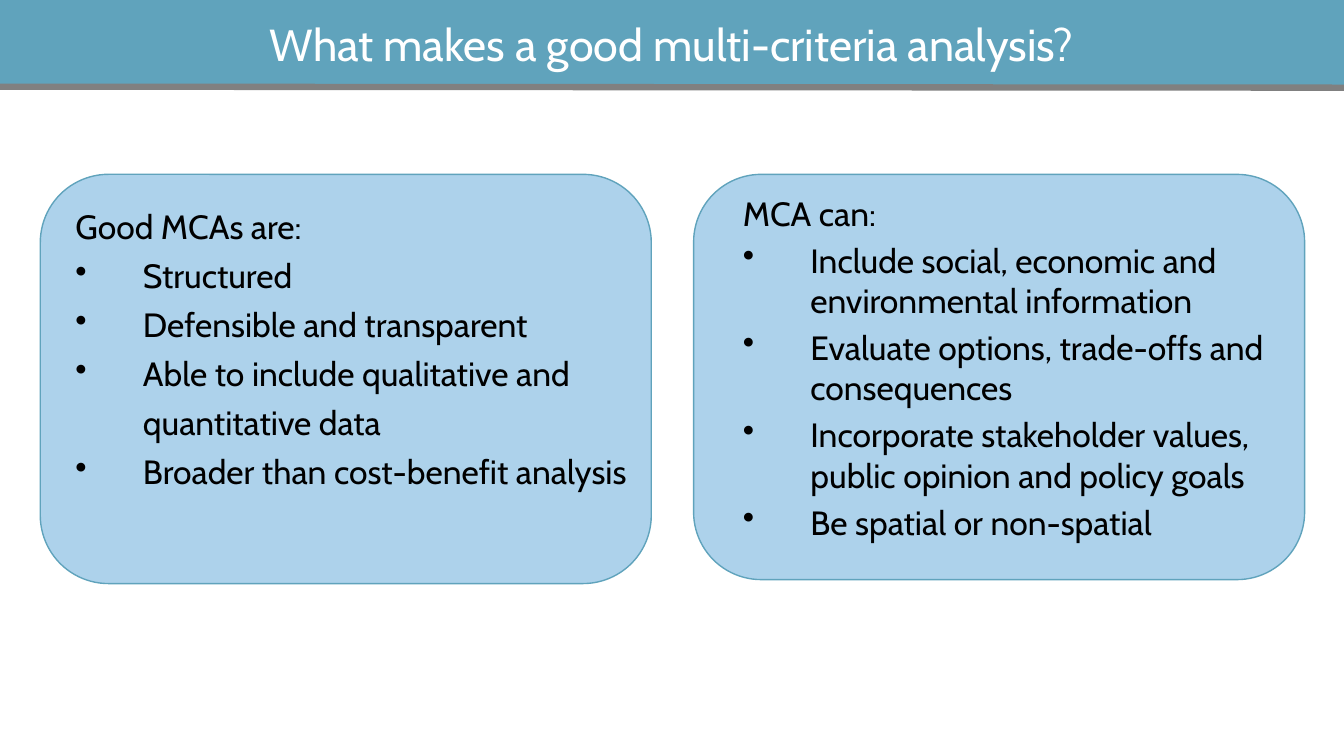
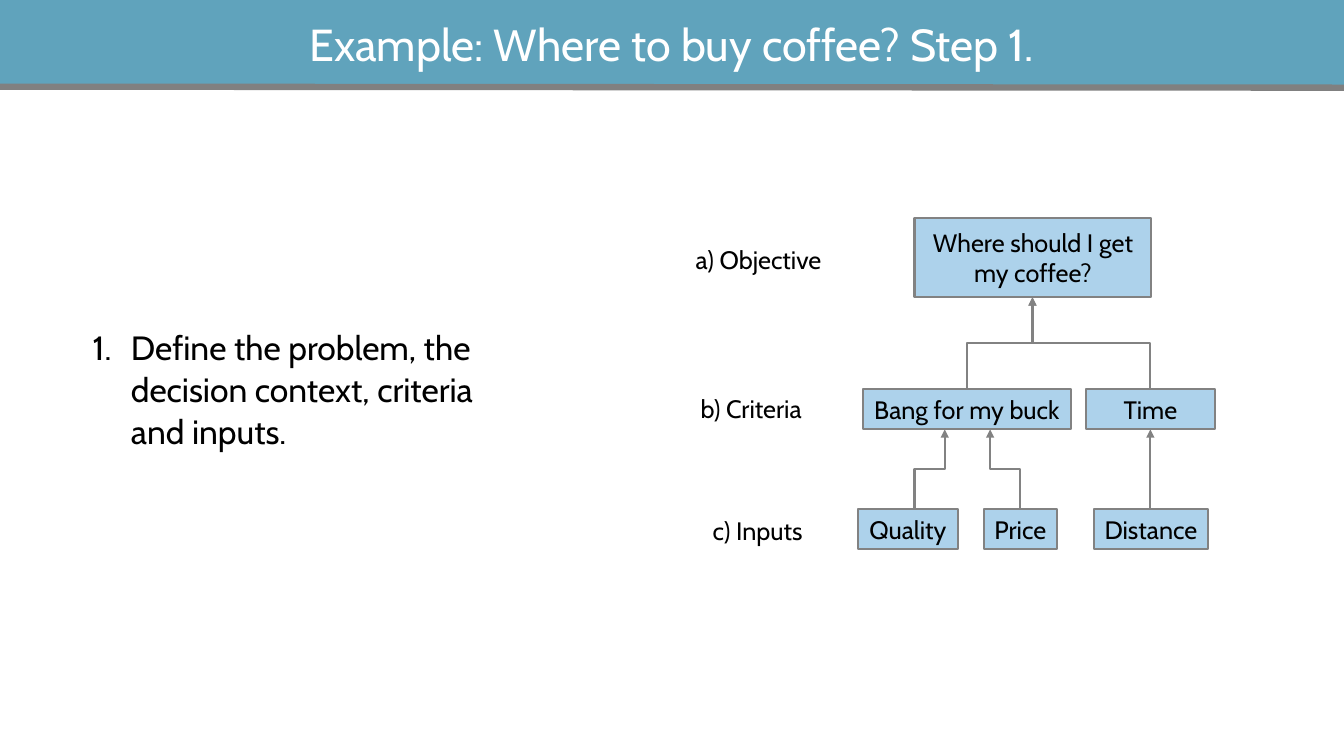
from dataclasses import dataclass
from typing import Optional

import pptx
import pptx.dml.color
import pptx.enum.shapes
import pptx.enum.text
import pptx.oxml
import pptx.oxml.ns
import pptx.util

PX = 9144  # 100 px to the inch
W, H = 1333, 750

# Shared style
FONT = "Cabin"
TEAL, GREY, SKY, EDGE = "60A3BC", "808080", "ADD2EB", "828282"
BLACK, WHITE = "000000", "FFFFFF"
SHAPE = pptx.enum.shapes.MSO_SHAPE
CONNECTOR = pptx.enum.shapes.MSO_CONNECTOR
ALIGN = pptx.enum.text.PP_ALIGN
ANCHOR = pptx.enum.text.MSO_ANCHOR
BULLET = '<a:buChar {ns} char="•"/>'
NUMBER = '<a:buAutoNum {ns} type="arabicPeriod"/>'
NS = pptx.oxml.ns.nsdecls("a")


@dataclass
class Panel:
    box: tuple[int, int, int, int]
    text_box: tuple[int, int, int, int]
    heading: str
    items: list[str]
    line: Optional[float] = None
    after: Optional[float] = None


@dataclass
class Node:
    text: str
    x: int
    y: int
    w: int
    h: int = 40
    wrap: bool = False


@dataclass
class Label:
    text: str
    x: int
    y: int


def emu(px: float) -> int:
    return round(px * PX)


def color(value: str) -> pptx.dml.color.RGBColor:
    return pptx.dml.color.RGBColor.from_string(value)


def add_text(tf, text: str, *, size: float = 24, fill: str = BLACK, align=None,
             marker: str = "", indent: int = 0, line: Optional[float] = None,
             after: Optional[float] = None) -> None:
    """Write one paragraph, reusing the empty first one."""
    p = tf.paragraphs[0]
    if p.runs:
        p = tf.add_paragraph()
    if marker:
        p_pr = p._p.get_or_add_pPr()
        p_pr.set("marL", str(emu(indent)))
        p_pr.set("indent", str(-emu(indent)))
        p_pr.append(pptx.oxml.parse_xml(marker.format(ns=NS)))
    if align is not None:
        p.alignment = align
    if line is not None:
        p.line_spacing = pptx.util.Pt(line)
    if after is not None:
        p.space_after = pptx.util.Pt(after)
    r = p.add_run()
    r.text = text
    r.font.name = FONT
    r.font.size = pptx.util.Pt(size)
    r.font.color.rgb = color(fill)


def add_box(s, kind, x: int, y: int, w: int, h: int, *, fill: str,
            line: str = "", width: float = 1):
    sp = s.shapes.add_shape(kind, emu(x), emu(y), emu(w), emu(h))
    sp.shadow.inherit = False
    sp.fill.solid()
    sp.fill.fore_color.rgb = color(fill)
    if line:
        sp.line.color.rgb = color(line)
        sp.line.width = pptx.util.Pt(width)
    else:
        sp.line.fill.background()
    sp.text_frame.vertical_anchor = ANCHOR.MIDDLE
    return sp


def add_text_box(s, x: int, y: int, w: int, h: int):
    tf = s.shapes.add_textbox(emu(x), emu(y), emu(w), emu(h)).text_frame
    tf.word_wrap = True
    return tf


def add_line(s, kind, x1: float, y1: float, x2: float, y2: float, *,
             line: str, width: float, arrow: bool = False):
    c = s.shapes.add_connector(kind, emu(x1), emu(y1), emu(x2), emu(y2))
    c.line.color.rgb = color(line)
    c.line.width = pptx.util.Pt(width)
    if arrow:
        c.line._get_or_add_ln().append(
            pptx.oxml.parse_xml(f'<a:tailEnd {NS} type="triangle"/>'))
    c._element.spPr.append(pptx.oxml.parse_xml(f"<a:effectLst {NS}/>"))
    return c


def add_up_arrow(s, x1: int, y1: int, x2: int, y2: int) -> None:
    """Arrow that leaves upwards, bending halfway if x changes."""
    style = dict(line=EDGE, width=1.5, arrow=True)
    if x1 == x2:
        add_line(s, CONNECTOR.STRAIGHT, x1, y1, x2, y2, **style)
        return
    # Lay the elbow on its side, then turn it a quarter anticlockwise
    cx, cy = (x1 + x2) / 2, (y1 + y2) / 2
    rise, run = (y1 - y2) / 2, (x2 - x1) / 2
    c = add_line(s, CONNECTOR.ELBOW, cx - rise, cy - run, cx + rise, cy + run, **style)
    c._element.spPr.find(pptx.oxml.ns.qn("a:xfrm")).set("rot", "16200000")


def new_slide(prs, title: str):
    """Blank slide with the title band and its rule."""
    s = prs.slides.add_slide(prs.slide_layouts[6])
    band = add_box(s, SHAPE.RECTANGLE, 0, 0, W, 87, fill=TEAL)
    add_text(band.text_frame, title, size=32, fill=WHITE, align=ALIGN.CENTER)
    add_line(s, CONNECTOR.STRAIGHT, 0, 86, W, 87, line=GREY, width=4.5)
    return s


def add_panel(s, panel: Panel) -> None:
    add_box(s, SHAPE.ROUNDED_RECTANGLE, *panel.box, fill=SKY, line=TEAL)
    tf = add_text_box(s, *panel.text_box)
    spacing = dict(line=panel.line, after=panel.after)
    add_text(tf, panel.heading, **spacing)
    for item in panel.items:
        add_text(tf, item, marker=BULLET, indent=67, **spacing)


def add_node(s, node: Node) -> None:
    sp = add_box(s, SHAPE.RECTANGLE, node.x, node.y, node.w, node.h,
                 fill=SKY, line=EDGE, width=1.5)
    sp.text_frame.word_wrap = node.wrap
    add_text(sp.text_frame, node.text, size=18, align=ALIGN.CENTER)


PANELS = [
    Panel((40, 173, 606, 406), (65, 191, 580, 377), "Good MCAs are:", [
        "Structured",
        "Defensible and transparent",
        "Able to include qualitative and quantitative data",
        "Broader than cost-benefit analysis",
    ], line=35),
    Panel((688, 173, 606, 402), (727, 186, 554, 384), "MCA can:", [
        "Include social, economic and environmental information",
        "Evaluate options, trade-offs and consequences",
        "Incorporate stakeholder values, public opinion and policy goals",
        "Be spatial or non-spatial",
    ], after=4.8),
]

# Decision tree rows
CRITERIA_Y, INPUTS_Y = 386, 505
NODES = [
    Node("Where should I get my coffee?", 907, 216, 235, 79, wrap=True),
    Node("Bang for my buck", 856, CRITERIA_Y, 206),
    Node("Time", 1077, CRITERIA_Y, 128),
    Node("Quality", 851, INPUTS_Y, 99),
    Node("Price", 976, INPUTS_Y, 72),
    Node("Distance", 1085, INPUTS_Y, 113),
]
ARROWS = [
    (907, INPUTS_Y, 937, 426),
    (1012, INPUTS_Y, 982, 426),
    (1141, INPUTS_Y, 1141, 426),
    (959, CRITERIA_Y, 1024, 295),
    (1141, CRITERIA_Y, 1024, 295),
]
LABELS = [
    Label("a) Objective", 680, 237),
    Label("b) Criteria", 685, 385),
    Label("c) Inputs", 697, 506),
]


def main() -> None:
    prs = pptx.Presentation()
    prs.slide_width, prs.slide_height = emu(W), emu(H)

    # Slide 1: qualities of an analysis
    s = new_slide(prs, "What makes a good multi-criteria analysis?")
    for panel in PANELS:
        add_panel(s, panel)

    # Slide 2: first step with the decision tree
    s = new_slide(prs, "Example: Where to buy coffee? Step 1.")
    add_text(add_text_box(s, 82, 318, 436, 136),
             "Define the problem, the decision context, criteria and inputs.",
             marker=NUMBER, indent=38, line=30)
    for node in NODES:
        add_node(s, node)
    for arrow in ARROWS:
        add_up_arrow(s, *arrow)
    for label in LABELS:
        add_text(add_text_box(s, label.x, label.y, 171, 40), label.text, size=18)

    prs.save("out.pptx")


if __name__ == "__main__":
    main()
